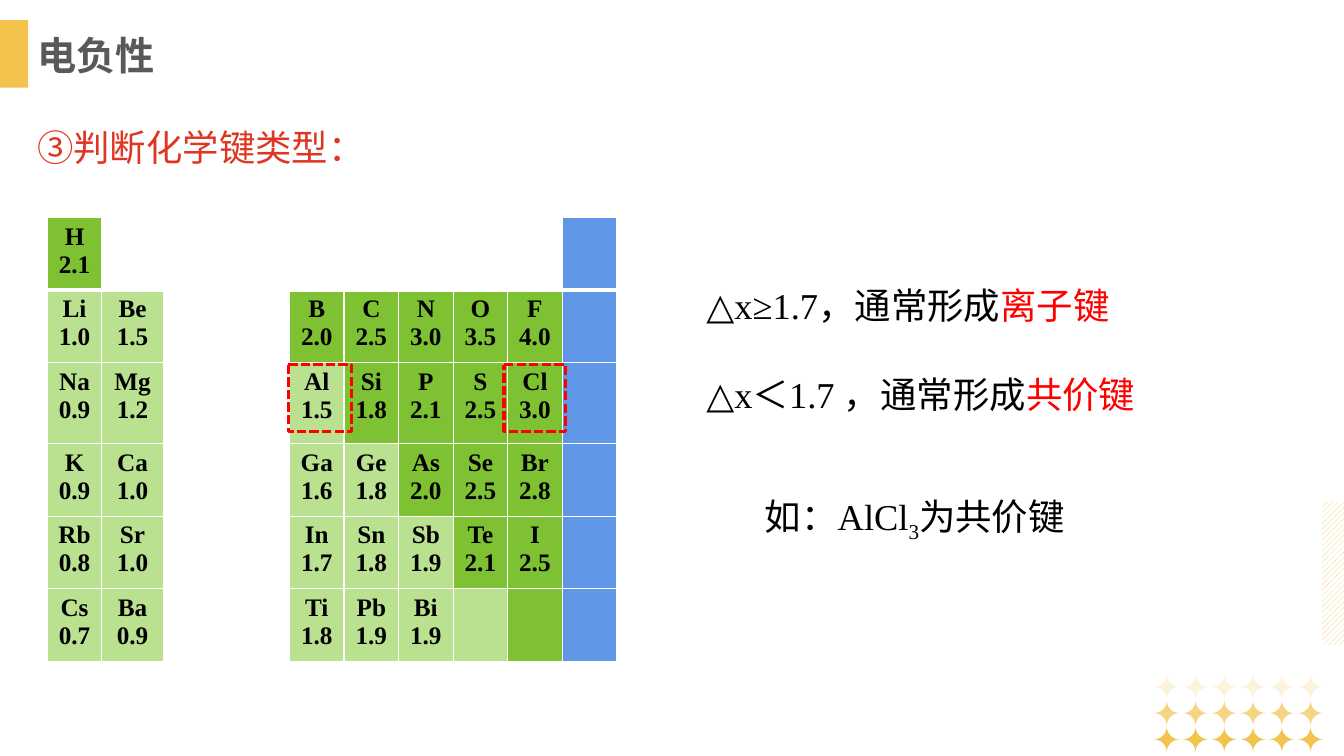
import dataclasses

import pptx
import pptx.dml.color
import pptx.enum.dml
import pptx.enum.shapes
import pptx.enum.text
import pptx.oxml
import pptx.oxml.ns
import pptx.util
from lxml import etree

SLIDE_WIDTH = pptx.util.Inches(13.333)
SLIDE_HEIGHT = pptx.util.Inches(7.5)
COLOURS = {
    "gold": "F2C34D", "white": "FFFFFF", "black": "000000", "grey": "595959",
    "brick": "DF3621", "red": "FF0000",
    "dark": "7EC234", "light": "BAE18F", "blue": "6096E6",
}
SERIF = "Times New Roman"
SHAPES = pptx.enum.shapes.MSO_SHAPE


@dataclasses.dataclass(frozen=True)
class Area:
    """A rectangle in percent of the slide's width and height."""
    left: float
    top: float
    width: float
    height: float

    def lengths(self) -> tuple:
        return (across(self.left), down(self.top), across(self.width), down(self.height))


@dataclasses.dataclass(frozen=True)
class Span:
    text: str
    colour: str = "black"
    subscript: bool = False


@dataclasses.dataclass(frozen=True)
class TextBlock:
    area: Area
    lines: list[list[Span]]
    size: int = 26
    font: str = SERIF
    bold: bool = False
    wrap: bool = True
    gap: int = 0


TEXT_BLOCKS = [
    TextBlock(Area(2.02, 15.87, 30.15, 10.8), [[Span("③判断化学键类型：", "brick")]]),
    TextBlock(Area(51.82, 36.8, 37.42, 18.8), [
        [Span("△x≥1.7，通常形成"), Span("离子键", "red")],
        [Span("△x＜1.7 ，通常形成"), Span("共价键", "red")],
    ], gap=32),
    TextBlock(Area(56.17, 64.67, 27.07, 7.2),
              [[Span("如：AlCl"), Span("3", subscript=True), Span("为共价键")]]),
    TextBlock(Area(2.02, 3.47, 10.27, 7.6), [[Span("电负性", "grey")]],
              size=28, font="Arial", bold=True, wrap=False),
]

TABLE_LEFT, TABLE_TOP = 3.52, 28.8
COLUMN_WIDTHS = [4.06, 4.57, 9.4] + [4.06] * 6
ROW_HEIGHTS = [9.6, 9.6, 10.7, 9.6, 9.6, 9.6]
GAP_COLUMN = 2
# One entry per column, "-" where a cell holds no element.
ELEMENTS = [
    "H 2.1|-|-|-|-|-|-|-|-",
    "Li 1.0|Be 1.5|-|B 2.0|C 2.5|N 3.0|O 3.5|F 4.0|-",
    "Na 0.9|Mg 1.2|-|Al 1.5|Si 1.8|P 2.1|S 2.5|Cl 3.0|-",
    "K 0.9|Ca 1.0|-|Ga 1.6|Ge 1.8|As 2.0|Se 2.5|Br 2.8|-",
    "Rb 0.8|Sr 1.0|-|In 1.7|Sn 1.8|Sb 1.9|Te 2.1|I 2.5|-",
    "Cs 0.7|Ba 0.9|-|Ti 1.8|Pb 1.9|Bi 1.9|-|-|-",
]
TONES = ["D.......B", "LL.DDDDDB", "LL.LDDDDB", "LL.LLDDDB", "LL.LLLDDB", "LL.LLLLDB"]
TONE_COLOURS = {"D": "dark", "L": "light", "B": "blue"}

HIGHLIGHTS = [Area(37.5, 48.27, 4.58, 8.8), Area(21.45, 48.27, 4.73, 8.8)]
STAR_COLUMNS = 6
STAR_OPACITIES = [20, 70, 100]


def across(share: float) -> int:
    return round(SLIDE_WIDTH * share / 100)


def down(share: float) -> int:
    return round(SLIDE_HEIGHT * share / 100)


def rgb(name: str) -> pptx.dml.color.RGBColor:
    return pptx.dml.color.RGBColor.from_string(COLOURS[name])


def add_plain_shape(page, kind, area: Area):
    """Add a preset shape without shadow or outline."""
    shape = page.shapes.add_shape(kind, *area.lengths())
    shape.shadow.inherit = False
    shape.line.fill.background()
    return shape


def add_gold_shape(page, kind, area: Area, opacity: int = 100):
    shape = add_plain_shape(page, kind, area)
    shape.fill.solid()
    shape.fill.fore_color.rgb = rgb("gold")
    if opacity < 100:
        colour = shape.fill._xPr.find(".//" + pptx.oxml.ns.qn("a:srgbClr"))
        etree.SubElement(colour, pptx.oxml.ns.qn("a:alpha"), val=str(opacity * 1000))
    return shape


def add_decoration(page) -> None:
    add_gold_shape(page, SHAPES.RECTANGLE, Area(0, 2.67, 2.1, 8.93))
    hatch = add_plain_shape(page, SHAPES.RECTANGLE, Area(98.35, 66.4, 1.65, 18.93))
    hatch.fill.patterned()
    hatch.fill.pattern = pptx.enum.dml.MSO_PATTERN.WIDE_UPWARD_DIAGONAL
    hatch.fill.fore_color.rgb = rgb("gold")
    hatch.fill.back_color.rgb = rgb("white")
    for row, opacity in enumerate(STAR_OPACITIES):
        for column in range(STAR_COLUMNS):
            area = Area(85.88 + 2.14 * column, 89.2 + 3.47 * row, 1.87, 3.33)
            star = add_gold_shape(page, SHAPES.PLAQUE, area, opacity)
            star.adjustments[0] = 0.5


def add_text(page, block: TextBlock) -> None:
    box = page.shapes.add_textbox(*block.area.lengths())
    frame = box.text_frame
    frame.word_wrap = block.wrap
    for index, line in enumerate(block.lines):
        para = frame.add_paragraph() if index else frame.paragraphs[0]
        para.font.size = pptx.util.Pt(block.size)
        para.font.name = block.font
        para.font.bold = block.bold
        if index:
            para.space_before = pptx.util.Pt(block.gap)
        for span in line:
            run = para.add_run()
            run.text = span.text
            run.font.color.rgb = rgb(span.colour)
            if span.subscript:
                run.font._rPr.set("baseline", "-25000")


def set_borders(cell, row: int) -> None:
    """Rule a cell in white, with a thick line under the first row."""
    widths = {"L": 1, "R": 1, "T": 3 if row == 1 else 1, "B": 3 if row == 0 else 1}
    properties = cell._tc.get_or_add_tcPr()
    for side, width in widths.items():
        properties.append(pptx.oxml.parse_xml(
            f'<a:ln{side} {pptx.oxml.ns.nsdecls("a")} w="{pptx.util.Pt(width)}"><a:solidFill>'
            f'<a:srgbClr val="{COLOURS["white"]}"/></a:solidFill></a:ln{side}>'))


def fill_cell(cell, content: str, tone: str) -> None:
    if tone in TONE_COLOURS:
        cell.fill.solid()
        cell.fill.fore_color.rgb = rgb(TONE_COLOURS[tone])
    else:
        cell.fill.background()
    if content == "-":
        return
    cell.text = content.replace(" ", "\n")
    for para in cell.text_frame.paragraphs:
        para.alignment = pptx.enum.text.PP_ALIGN.CENTER
        para.font.size = pptx.util.Pt(18)
        para.font.name = SERIF
        para.font.bold = True
        para.font.color.rgb = rgb("black")


def add_element_table(page) -> None:
    area = Area(TABLE_LEFT, TABLE_TOP, sum(COLUMN_WIDTHS), sum(ROW_HEIGHTS))
    table = page.shapes.add_table(len(ROW_HEIGHTS), len(COLUMN_WIDTHS), *area.lengths()).table
    table.first_row = table.horz_banding = False
    for column, width in zip(table.columns, COLUMN_WIDTHS):
        column.width = across(width)
    for row, height in zip(table.rows, ROW_HEIGHTS):
        row.height = down(height)
    for row, (contents, tones) in enumerate(zip(ELEMENTS, TONES)):
        for column, (content, tone) in enumerate(zip(contents.split("|"), tones)):
            cell = table.cell(row, column)
            set_borders(cell, row)
            fill_cell(cell, content, tone)
    table.cell(0, 1).merge(table.cell(0, 7))
    table.cell(3, GAP_COLUMN).merge(table.cell(5, GAP_COLUMN))


def add_highlight(page, area: Area) -> None:
    frame = add_plain_shape(page, SHAPES.ROUNDED_RECTANGLE, area)
    frame.adjustments[0] = 0
    frame.fill.background()
    frame.line.color.rgb = rgb("red")
    frame.line.width = pptx.util.Pt(2.25)
    frame.line.dash_style = pptx.enum.dml.MSO_LINE.SQUARE_DOT


def main() -> None:
    deck = pptx.Presentation()
    deck.slide_width, deck.slide_height = SLIDE_WIDTH, SLIDE_HEIGHT
    page = deck.slides.add_slide(deck.slide_layouts[6])
    add_decoration(page)
    add_element_table(page)
    for block in TEXT_BLOCKS:
        add_text(page, block)
    for area in HIGHLIGHTS:
        add_highlight(page, area)
    deck.save("out.pptx")


if __name__ == "__main__":
    main()
